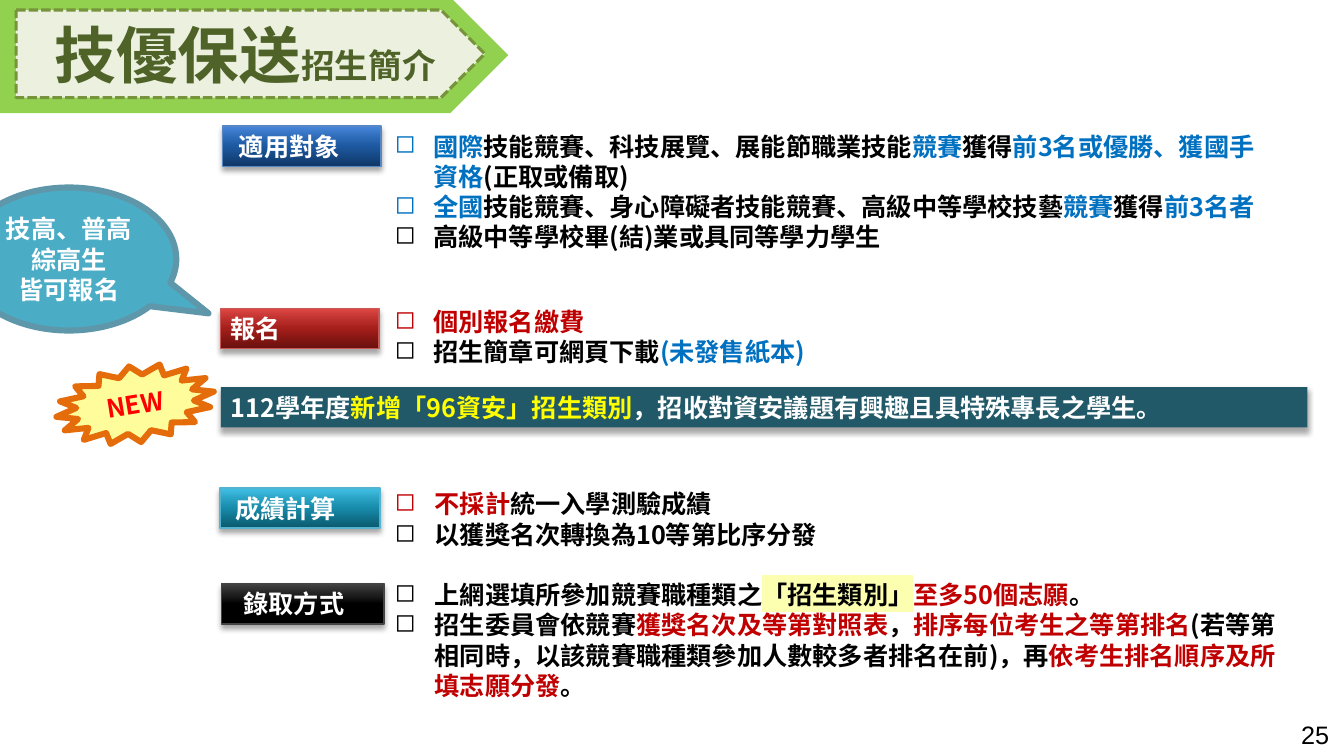
from lxml import etree
from pptx import Presentation
from pptx.dml.color import RGBColor
from pptx.enum import dml, shapes, text
from pptx.oxml import parse_xml
from pptx.oxml.ns import nsdecls, qn
from pptx.util import Pt

FONT = "Noto Sans CJK SC"
SIZE, LINE_HEIGHT = 18, 21.6
HEX = {
    "black": "000000", "white": "FFFFFF", "blue": "0070C0", "red": "C00000",
    "yellow": "FFFF00", "bright red": "FF0000", "marker": "FCFEB0",
    "olive": "4F6228", "lime": "92D050", "pale": "EBF1DE", "moss": "77933C",
    "aqua": "4BACC6", "aqua edge": "5F97AA", "teal": "215968",
    "lemon": "FFFD9B", "orange": "E46C0A",
}
SHAPE, ALIGN = shapes.MSO_SHAPE, text.PP_ALIGN

# Each body: box, hanging indent, then (space before, runs) per paragraph
BODIES = [
    ((275, 90, 642.2, 276.5), 27.4, [
        (0, [("國際", "blue"), ("技能競賽、科技展覽、展能節職業技能", "black"),
             ("競賽", "blue"), ("獲得", "black"),
             ("前3名或優勝、獲國手資格", "blue"), ("(正取或備取)", "black")]),
        (0, [("全國", "blue"),
             ("技能競賽、身心障礙者技能競賽、高級中等學校技藝", "black"),
             ("競賽", "blue"), ("獲得", "black"), ("前3名者", "blue")]),
        (0, [("高級中等學校畢(結)業或具同等學力學生", "black")]),
        (39, [("個別報名繳費", "red")]),
        (0, [("招生簡章可網頁下載", "black"), ("(未發售紙本)", "blue")]),
    ]),
    ((275, 345.6, 644.4, 185), 28.4, [
        (0, [("不採計", "red"), ("統一入學測驗成績", "black")]),
        (0, [("以獲獎名次轉換為10等第比序分發", "black")]),
        (LINE_HEIGHT, [("上網選填所參加競賽職種類之", "black"),
                       ("「招生類別」", "black", "marker"),
                       ("至多50個志願", "red"), ("。", "black")]),
        (0, [("招生委員會依競賽", "black"), ("獲獎名次及等第對照表", "red"),
             ("，", "black"), ("排序每位考生之等第排名", "red"),
             ("(若等第相同時，以該競賽職種類參加人數較多者排名在前)，再", "black"),
             ("依考生排名順序及所填志願分發", "red"), ("。", "black")]),
    ]),
]

# Label, left, top, width, text inset, edge colour, gradient from bottom to top
LABELS = [
    ("成績計算", 157, 348.5, 114.5, 11, "54B3CF", ("0B586C", "178BAA", "279FC0", "41C1E6")),
    ("報名", 157.7, 220.3, 113, 7.2, "C95956", ("68100E", "A41E1A", "B92E2A", "DF4845")),
    ("適用對象", 159.1, 90, 113, 11.5, "5887C6", ("0F3766", "1D59A1", "2D6AB6", "4786DB")),
    ("錄取方式", 158.4, 416.9, 115.9, 15.5, "444444", ("000000", "000000", "1D1D1D", "424242")),
]
GRADIENT_STOPS = (0, 50, 70, 100)
BAR_HEIGHT = 28.8

CALLOUT = ["技高、普高", "綜高生", "皆可報名"]
BANNER = [("112學年度", "white"), ("新增「96資安」招生類別", "yellow"),
          ("，招收對資安議題有興趣且具特殊專長之學生。", "white")]
TITLE = [("技優保送", 44), ("招生簡介", 24)]


def rgb(name):
    return RGBColor.from_string(HEX[name])


def add_span(para, words, colour, marker=None, size=SIZE, font=FONT, bold=True):
    span = para.add_run()
    span.text = words
    span.font.size, span.font.bold = Pt(size), bold
    span.font.color.rgb = rgb(colour)
    span.font.name = font
    latin = span.font._element.find(qn("a:latin"))
    latin.addnext(parse_xml(f'<a:ea {nsdecls("a")} typeface="{font}"/>'))
    if marker:
        latin.addprevious(parse_xml(
            f'<a:highlight {nsdecls("a")}><a:srgbClr val="{HEX[marker]}"/></a:highlight>'))


def add_bullet(para, indent, colour):
    props = para._p.get_or_add_pPr()
    props.set("marL", str(Pt(indent)))
    props.set("indent", str(-Pt(indent)))
    tint = etree.SubElement(props, qn("a:buClr"))
    etree.SubElement(tint, qn("a:srgbClr")).set("val", HEX[colour])
    etree.SubElement(props, qn("a:buChar")).set("char", "◻")


def add_figure(kind, box, fill=None, edge=None, width=1, inset=7.2):
    figure = page.shapes.add_shape(kind, *map(Pt, box))
    figure.shadow.inherit = False
    if fill:
        figure.fill.solid()
        figure.fill.fore_color.rgb = rgb(fill)
    if edge:
        figure.line.color.rgb = RGBColor.from_string(HEX.get(edge, edge))
        figure.line.width = Pt(width)
    else:
        figure.line.fill.background()
    frame = figure.text_frame
    frame.margin_left = Pt(inset)
    frame.vertical_anchor = text.MSO_ANCHOR.MIDDLE
    frame.paragraphs[0].alignment = ALIGN.LEFT
    return figure


def add_drop_shadow(figure):
    figure._element.spPr.find(qn("a:effectLst")).append(parse_xml(
        f'<a:outerShdw {nsdecls("a")} blurRad="{Pt(4)}" dist="{Pt(3)}" dir="5400000" rotWithShape="0">'
        f'<a:srgbClr val="{HEX["black"]}"><a:alpha val="35000"/></a:srgbClr></a:outerShdw>'))


def fill_upwards(figure, colours):
    """Fill with a gradient whose first colour lies at the bottom."""
    stops = "".join(f'<a:gs pos="{stop * 1000}"><a:srgbClr val="{colour}"/></a:gs>'
                    for stop, colour in zip(GRADIENT_STOPS, colours))
    figure._element.spPr.find(qn("a:prstGeom")).addnext(parse_xml(
        f'<a:gradFill {nsdecls("a")} rotWithShape="1"><a:gsLst>{stops}</a:gsLst>'
        '<a:lin ang="16200000" scaled="0"/></a:gradFill>'))


def add_body(box, indent, paragraphs):
    frame = page.shapes.add_textbox(*map(Pt, box)).text_frame
    frame.word_wrap = True
    for index, (gap, spans) in enumerate(paragraphs):
        para = frame.add_paragraph() if index else frame.paragraphs[0]
        para.line_spacing, para.space_before = Pt(LINE_HEIGHT), Pt(gap)
        add_bullet(para, indent, spans[0][1])
        for span in spans:
            add_span(para, *span)


def add_callout():
    bubble = add_figure(SHAPE.OVAL_CALLOUT, (-27.4, 133.9, 153.4, 102.2),
                        "aqua", "aqua edge", 4.33)
    bubble.adjustments[0], bubble.adjustments[1] = 0.65, 0.38
    frame = bubble.text_frame
    frame.word_wrap = False
    for index, words in enumerate(CALLOUT):
        para = frame.add_paragraph() if index else frame.paragraphs[0]
        para.alignment, para.line_spacing = ALIGN.CENTER, Pt(LINE_HEIGHT)
        add_span(para, words, "white")


def add_label(words, left, top, width, inset, edge, colours):
    label = add_figure(SHAPE.RECTANGLE, (left, top, width, BAR_HEIGHT), edge=edge, inset=inset)
    fill_upwards(label, colours)
    add_drop_shadow(label)
    para = label.text_frame.paragraphs[0]
    para.line_spacing = Pt(LINE_HEIGHT)
    add_span(para, words, "white")


def add_title():
    add_figure(SHAPE.PENTAGON, (0, -2, 363, 82.8), "lime")
    plate = add_figure(SHAPE.PENTAGON, (11.5, 7.2, 334.8, 62.6), "pale", "moss", 2.25, inset=27.5)
    plate.line.dash_style = dml.MSO_LINE.SQUARE_DOT
    plate.text_frame.word_wrap = False
    for words, size in TITLE:
        add_span(plate.text_frame.paragraphs[0], words, "olive", size=size)


def add_new_badge():
    badge = add_figure(SHAPE.STAR_16_POINT, (39.6, 261.4, 113.8, 54.7), "lemon", "orange", 4.33)
    badge.rotation = 350.9
    badge.text_frame.word_wrap = False
    para = badge.text_frame.paragraphs[0]
    para.alignment, para.line_spacing = ALIGN.CENTER, Pt(LINE_HEIGHT)
    add_span(para, "NEW", "bright red")


def add_banner():
    banner = add_figure(SHAPE.RECTANGLE, (157.7, 276.5, 776.2, BAR_HEIGHT), "teal")
    add_drop_shadow(banner)
    para = banner.text_frame.paragraphs[0]
    para.line_spacing = Pt(LINE_HEIGHT)
    for span in BANNER:
        add_span(para, *span)


deck = Presentation()
deck.slide_width, deck.slide_height = Pt(960), Pt(540)
page = deck.slides.add_slide(deck.slide_layouts[6])

number = page.shapes.add_textbox(Pt(922.3), Pt(510.5), Pt(37.4), Pt(28.8))
add_span(number.text_frame.paragraphs[0], "25", "black", font="Arial", bold=False)
for body in BODIES:
    add_body(*body)
add_callout()
for label_row in LABELS:
    add_label(*label_row)
add_title()
add_new_badge()
add_banner()
deck.save("out.pptx")
